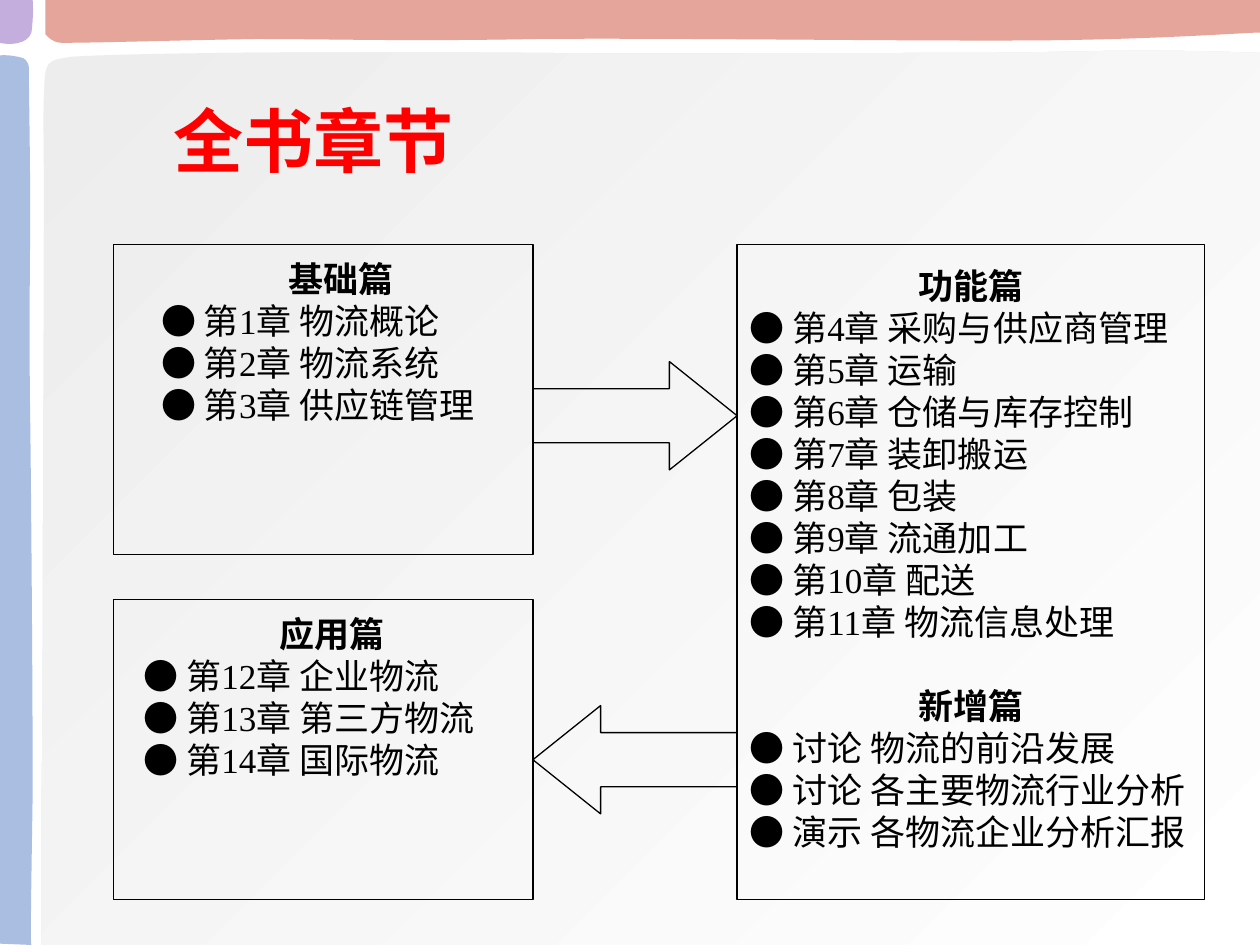
import pptx
import pptx.util
import pptx.dml.color
import pptx.enum.shapes
import pptx.enum.text
import pptx.oxml.ns
import lxml.etree

Inches, Pt = pptx.util.Inches, pptx.util.Pt
RGBColor = pptx.dml.color.RGBColor
SHAPE = pptx.enum.shapes.MSO_SHAPE
ALIGN = pptx.enum.text.PP_ALIGN
ANCHOR = pptx.enum.text.MSO_ANCHOR
qn = pptx.oxml.ns.qn

RED = RGBColor(0xFF, 0x00, 0x00)
BLACK = RGBColor(0x00, 0x00, 0x00)
WHITE = RGBColor(0xFF, 0xFF, 0xFF)
PANEL_GRAY = RGBColor(0xE6, 0xE6, 0xE6)
CORAL = RGBColor(0xDA, 0x7F, 0x70)
BLUE = RGBColor(0x85, 0xA3, 0xD5)
PURPLE = RGBColor(0xAC, 0x8C, 0xD0)
BODY_FONT, CJK_FONT, TITLE_FONT = "Times New Roman", "Noto Sans CJK SC", "Noto Sans CJK JP"
LINE_PITCH = Pt(24)

# Outlines in inches: a pair is a straight line, six numbers are a cubic curve
PANEL = [(10, 7.5), (10, 0.42),
         (8.86, 0.38, 8.55, 0.42, 7.6, 0.42), (6.66, 0.42, 5.5, 0.43, 4.33, 0.42),
         (3.16, 0.41, 1.23, 0.41, 0.57, 0.45), (0.36, 0.48, 0.36, 0.49, 0.35, 0.73),
         (0.34, 0.96, 0.35, 1.1, 0.35, 1.82), (0.35, 2.56, 0.34, 4.12, 0.34, 5.06),
         (0.34, 6.01, 0.32, 6.62, 0.33, 7.5)]
TOP_BAND = [(10, 0), (10, 0.26),
            (10.01, 0.25, 9.28, 0.31, 8.32, 0.32), (7.36, 0.33, 5.31, 0.3, 4.26, 0.31),
            (3.21, 0.33, 2.65, 0.31, 2.03, 0.31), (1.4, 0.32, 0.77, 0.34, 0.49, 0.34),
            (0.41, 0.34, 0.36, 0.27, 0.36, 0.27), (0.36, 0.27, 0.36, 0.14, 0.36, 0)]
SIDE_BAND = [(0, 7.49), (0.25, 7.5),
             (0.24, 7.51, 0.25, 6.98, 0.26, 6.28), (0.26, 5.58, 0.25, 4.07, 0.24, 3.3),
             (0.23, 2.54, 0.24, 2.12, 0.24, 1.67), (0.24, 1.21, 0.23, 0.75, 0.23, 0.54),
             (0.23, 0.48, 0.18, 0.46, 0.18, 0.46), (0.07, 0.43, 0, 0.44, 0, 0.44)]
CORNER = [(0, 0), (0.26, 0), (0.27, 0.12, 0.25, 0.26, 0.25, 0.26),
          (0.23, 0.31, 0.19, 0.33, 0.15, 0.34), (0.07, 0.36, 0, 0.34, 0, 0.34)]

BASICS = ("基础篇", ["第1章 物流概论", "第2章 物流系统", "第3章 供应链管理"])
FUNCTIONS = ("功能篇", ["第4章 采购与供应商管理", "第5章 运输", "第6章 仓储与库存控制",
                     "第7章 装卸搬运", "第8章 包装", "第9章 流通加工", "第10章 配送",
                     "第11章 物流信息处理"])
ADDITIONS = ("新增篇", ["讨论 物流的前沿发展", "讨论 各主要物流行业分析", "演示 各物流企业分析汇报"])
APPLICATIONS = ("应用篇", ["第12章 企业物流", "第13章 第三方物流", "第14章 国际物流"])


def bend_lines(area, outline):
    """Turn the straight lines of a freeform into the outline's cubic curves."""
    lines = list(area._element.spPr.iter(qn("a:lnTo")))
    for line, segment in zip(lines, outline[1:]):
        if len(segment) == 2:
            continue
        curve = lxml.etree.Element(qn("a:cubicBezTo"))
        for x, y in zip(segment[::2], segment[1::2]):
            point = lxml.etree.SubElement(curve, qn("a:pt"))
            point.set("x", str(Inches(x) - area.left))
            point.set("y", str(Inches(y) - area.top))
        line.getparent().replace(line, curve)


def add_soft_area(slide, outline, *colors):
    """Borderless 70 % opaque area; two colours make a diagonal gradient."""
    corners = [(Inches(segment[-2]), Inches(segment[-1])) for segment in outline]
    builder = slide.shapes.build_freeform(*corners[0], scale=1.0)
    builder.add_line_segments(corners[1:], close=True)
    area = builder.convert_to_shape()
    bend_lines(area, outline)
    area.shadow.inherit = False
    area.line.fill.background()
    if len(colors) == 1:
        area.fill.solid()
        area.fill.fore_color.rgb = colors[0]
    else:
        area.fill.gradient()
        area.fill.gradient_angle = 315
        for stop, color in zip(area.fill.gradient_stops, colors):
            stop.color.rgb = color
    for color_tag in area._element.spPr.iter(qn("a:srgbClr")):
        lxml.etree.SubElement(color_tag, qn("a:alpha")).set("val", "70000")


def add_background(slide):
    add_soft_area(slide, PANEL, PANEL_GRAY, WHITE)
    add_soft_area(slide, TOP_BAND, CORAL)
    add_soft_area(slide, SIDE_BAND, BLUE)
    add_soft_area(slide, CORNER, PURPLE)


def add_run(paragraph, text, size, color, bold, latin, east_asian):
    run = paragraph.add_run()
    run.text = text
    run.font.size, run.font.bold, run.font.name = Pt(size), bold, latin
    run.font.color.rgb = color
    ea = lxml.etree.SubElement(run.font._element, qn("a:ea"))
    ea.set("typeface", east_asian)


def place_title(slide, left, top, width, height):
    title = slide.shapes.title
    title.left, title.top, title.width, title.height = left, top, width, height
    title.text_frame.vertical_anchor = ANCHOR.MIDDLE
    paragraph = title.text_frame.paragraphs[0]
    paragraph.alignment = ALIGN.LEFT
    add_run(paragraph, "全书章节", 40, RED, True, TITLE_FONT, TITLE_FONT)
    # Bring the title in front of the translucent panel
    slide.shapes._spTree.append(title._element)


def add_outlined(group, preset, left, top, width, height):
    shape = group.shapes.add_shape(preset, left, top, width, height)
    shape.shadow.inherit = False
    shape.fill.background()
    shape.line.color.rgb = BLACK
    shape.line.width = Pt(0.75)
    return shape


def add_chapter_box(group, left, top, width, height, parts, inset_top, indent=0):
    box = add_outlined(group, SHAPE.RECTANGLE, left, top, width, height)
    frame = box.text_frame
    frame.word_wrap = True
    frame.vertical_anchor = ANCHOR.TOP
    frame.margin_left = frame.margin_right = Inches(0.1)
    frame.margin_top, frame.margin_bottom = inset_top, Inches(0.05)
    paragraph = frame.paragraphs[0]
    for number, (heading, chapters) in enumerate(parts):
        for row, text in enumerate([heading] + [f"● {chapter}" for chapter in chapters]):
            if number or row:
                paragraph = frame.add_paragraph()
            is_heading = row == 0
            paragraph.alignment = ALIGN.CENTER if is_heading else ALIGN.JUSTIFY
            paragraph.line_spacing = LINE_PITCH
            if number and is_heading:
                paragraph.space_before = LINE_PITCH
            if indent:
                paragraph._p.get_or_add_pPr().set("indent", str(indent))
            add_run(paragraph, text, 20, BLACK, is_heading, BODY_FONT, CJK_FONT)


def add_flow_arrow(group, left, top, width, height, points_left=False):
    arrow = add_outlined(group, SHAPE.RIGHT_ARROW, left, top, width, height)
    arrow.adjustments[0], arrow.adjustments[1] = 0.5, 0.625
    if points_left:
        arrow._element.spPr.find(qn("a:xfrm")).set("flipH", "1")


def add_chapter_map(slide, left, top, width, height):
    left_width, right_width = Inches(3.33), Inches(3.71)
    basics_height, applications_height = Inches(2.46), Inches(2.38)
    arrow_left, arrow_height = left + left_width, Inches(0.86)
    right_left = left + width - right_width
    arrow_width = right_left - arrow_left

    group = slide.shapes.add_group_shape()
    add_chapter_box(group, left, top, left_width, basics_height,
                    [BASICS], Inches(0.1), Inches(0.28))
    add_flow_arrow(group, arrow_left, top + Inches(0.93), arrow_width, arrow_height)
    add_chapter_box(group, right_left, top, right_width, height,
                    [FUNCTIONS, ADDITIONS], Inches(0.16))
    add_chapter_box(group, left, top + height - applications_height, left_width,
                    applications_height, [APPLICATIONS], Inches(0.1), Inches(0.14))
    add_flow_arrow(group, arrow_left, top + Inches(3.66), arrow_width, arrow_height,
                   points_left=True)


def main():
    deck = pptx.Presentation()
    deck.slide_width, deck.slide_height = Inches(10), Inches(7.5)
    slide = deck.slides.add_slide(deck.slide_layouts.get_by_name("Title Only"))
    add_background(slide)
    place_title(slide, Inches(1.28), Inches(0.59), Inches(7.36), Inches(1.03))
    add_chapter_map(slide, Inches(0.9), Inches(1.94), Inches(8.66), Inches(5.2))
    deck.save("out.pptx")


if __name__ == "__main__":
    main()
